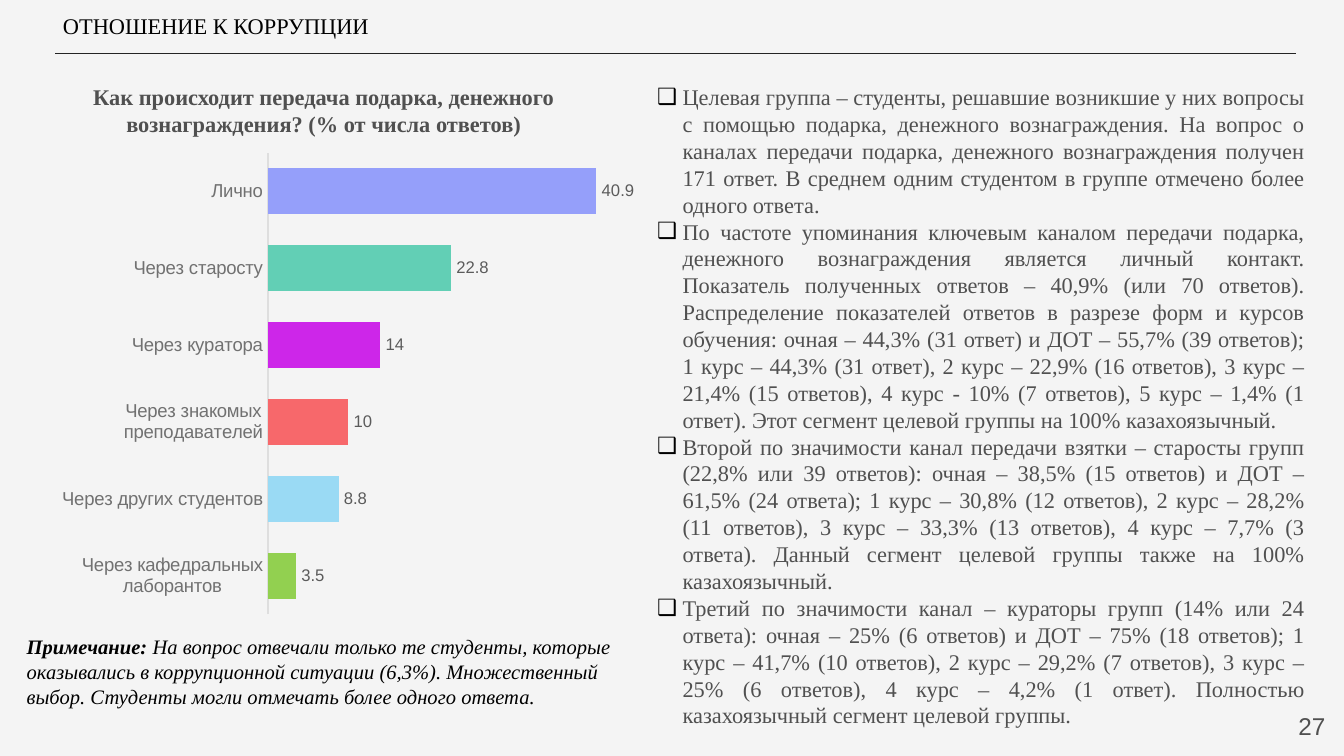
from dataclasses import dataclass

from lxml import etree
from pptx import Presentation
from pptx.chart.data import CategoryChartData
from pptx.dml.color import RGBColor
from pptx.enum.chart import XL_CHART_TYPE, XL_LABEL_POSITION, XL_TICK_LABEL_POSITION, XL_TICK_MARK
from pptx.enum.shapes import MSO_CONNECTOR
from pptx.enum.text import MSO_AUTO_SIZE, PP_ALIGN
from pptx.oxml.ns import qn
from pptx.util import Inches, Pt

BAR = XL_CHART_TYPE.BAR_CLUSTERED
OUTSIDE_END = XL_LABEL_POSITION.OUTSIDE_END
NEXT_TO_AXIS = XL_TICK_LABEL_POSITION.NEXT_TO_AXIS
NO_TICKS = XL_TICK_MARK.NONE
STRAIGHT = MSO_CONNECTOR.STRAIGHT
FIT_TEXT, FIXED = MSO_AUTO_SIZE.SHAPE_TO_FIT_TEXT, MSO_AUTO_SIZE.NONE
LEFT, CENTER, RIGHT, JUSTIFY = PP_ALIGN.LEFT, PP_ALIGN.CENTER, PP_ALIGN.RIGHT, PP_ALIGN.JUSTIFY


@dataclass(frozen=True)
class Theme:
    background: str = "F4F4F4"
    black: str = "000000"
    rule: str = "242424"
    body: str = "505050"
    category: str = "717171"
    value: str = "5B5B5B"
    axis: str = "DEDEDE"
    serif: str = "Times New Roman"
    sans: str = "Arial"
    text_size: float = 12
    note_size: float = 11
    number_size: float = 13
    category_size: float = 10
    value_size: float = 9


@dataclass(frozen=True)
class TextBlock:
    box: tuple[float, float, float, float]
    paragraphs: tuple[str, ...]
    color: str
    size: float
    font: str = Theme.serif
    align: PP_ALIGN = LEFT
    padding: tuple[float, float] = (0.1, 0.1)  # sides, top and bottom
    bold: bool = False
    italic: bool = False
    fit: bool = False
    bullet: str = ""
    lead: str = ""  # bold opening words


@dataclass(frozen=True)
class Channel:
    name: str
    percent: float
    color: str


THEME = Theme()

CHANNELS = [  # from the bottom bar up
    Channel("Через кафедральных лаборантов", 3.5, "92D050"),
    Channel("Через других студентов", 8.8, "9ADAF4"),
    Channel("Через знакомых преподавателей", 10, "F7686B"),
    Channel("Через куратора", 14, "CD26E9"),
    Channel("Через старосту", 22.8, "62CFB5"),
    Channel("Лично", 40.9, "959FFA"),
]

FINDINGS = (
    "Целевая группа – студенты, решавшие возникшие у них вопросы с помощью подарка, денежного "
    "вознаграждения. На вопрос о каналах передачи подарка, денежного вознаграждения получен "
    "171 ответ. В среднем одним студентом в группе отмечено более одного ответа.",
    "По частоте упоминания ключевым каналом передачи подарка, денежного вознаграждения является "
    "личный контакт. Показатель полученных ответов – 40,9% (или 70 ответов). Распределение "
    "показателей ответов в разрезе форм и курсов обучения: очная – 44,3% (31 ответ) и ДОТ – 55,7% "
    "(39 ответов); 1 курс – 44,3% (31 ответ), 2 курс – 22,9% (16 ответов), 3 курс – 21,4% "
    "(15 ответов), 4 курс - 10% (7 ответов), 5 курс – 1,4% (1 ответ). Этот сегмент целевой группы "
    "на 100% казахоязычный.",
    "Второй по значимости канал передачи взятки – старосты групп (22,8% или 39 ответов): очная – "
    "38,5% (15 ответов) и ДОТ – 61,5% (24 ответа); 1 курс – 30,8% (12 ответов), 2 курс – 28,2% "
    "(11 ответов), 3 курс – 33,3% (13 ответов), 4 курс – 7,7% (3 ответа). Данный сегмент целевой "
    "группы также на 100% казахоязычный.",
    "Третий по значимости канал – кураторы групп (14% или 24 ответа): очная – 25% (6 ответов) и "
    "ДОТ – 75% (18 ответов); 1 курс – 41,7% (10 ответов), 2 курс – 29,2% (7 ответов), 3 курс – 25% "
    "(6 ответов), 4 курс – 4,2% (1 ответ). Полностью казахоязычный сегмент целевой группы.",
)

TEXT_BLOCKS = [
    TextBlock((9.36, 5.19, 0.6, 0.43), ("27",), THEME.body, THEME.number_size, THEME.sans, RIGHT),
    TextBlock((4.79, 0.52, 5.02, 4.97), FINDINGS, THEME.body, THEME.text_size,
              align=JUSTIFY, bullet="❑"),
    TextBlock((0.31, 0.52, 4.2, 0.61),
              ("Как происходит передача подарка, денежного вознаграждения? (% от числа ответов)",),
              THEME.body, THEME.text_size, align=CENTER, bold=True, fit=True),
    TextBlock((0.37, 0.04, 9.25, 0.3), ("ОТНОШЕНИЕ К КОРРУПЦИИ",), THEME.black, THEME.text_size,
              padding=(0.1, 0.05), fit=True),
    TextBlock((0.1, 4.67, 4.69, 0.66),
              ("На вопрос отвечали только те студенты, которые оказывались в коррупционной ситуации "
               "(6,3%). Множественный выбор. Студенты могли отмечать более одного ответа.",),
              THEME.black, THEME.note_size, padding=(0.1, 0.05), italic=True, fit=True,
              lead="Примечание: "),
]


def rgb(color: str) -> RGBColor:
    return RGBColor.from_string(color)


def style_font(font, name: str, size: float, color: str) -> None:
    font.name, font.size = name, Pt(size)
    font.color.rgb = rgb(color)


def add_bullet(paragraph, symbol: str) -> None:
    properties = paragraph._p.get_or_add_pPr()
    properties.set("marL", str(Inches(0.19)))
    properties.set("indent", str(Inches(-0.19)))
    color = etree.SubElement(properties, qn("a:buClr"))
    etree.SubElement(color, qn("a:srgbClr"), val=THEME.black)
    etree.SubElement(properties, qn("a:buFont"), typeface=THEME.sans)
    etree.SubElement(properties, qn("a:buChar"), char=symbol)


def add_text(slide, block: TextBlock) -> None:
    frame = slide.shapes.add_textbox(*map(Inches, block.box)).text_frame
    frame.word_wrap = True
    frame.auto_size = FIT_TEXT if block.fit else FIXED
    frame.margin_left = frame.margin_right = Inches(block.padding[0])
    frame.margin_top = frame.margin_bottom = Inches(block.padding[1])
    for index, text in enumerate(block.paragraphs):
        paragraph = frame.add_paragraph() if index else frame.paragraphs[0]
        paragraph.alignment = block.align
        if block.bullet:
            add_bullet(paragraph, block.bullet)
        style_font(paragraph.font, block.font, block.size, block.color)
        paragraph.font.bold, paragraph.font.italic = block.bold, block.italic
        if block.lead:
            lead = paragraph.add_run()
            lead.text, lead.font.bold = block.lead, True
        paragraph.add_run().text = text


def add_header_rule(slide) -> None:
    rule = slide.shapes.add_connector(STRAIGHT, Inches(0.41), Inches(0.4), Inches(9.64), Inches(0.4))
    rule.line.color.rgb, rule.line.width = rgb(THEME.rule), Pt(0.75)
    etree.SubElement(rule._element.spPr, qn("a:effectLst"))


def set_plot_area(chart, x: float, y: float, width: float, height: float) -> None:
    plot_area = chart._chartSpace.chart.plotArea
    for old in plot_area.findall(qn("c:layout")):
        plot_area.remove(old)
    layout = etree.Element(qn("c:layout"))
    plot_area.insert(0, layout)
    manual = etree.SubElement(layout, qn("c:manualLayout"))
    settings = {"layoutTarget": "inner", "xMode": "edge", "yMode": "edge",
                "x": x, "y": y, "w": width, "h": height}
    for name, value in settings.items():
        etree.SubElement(manual, qn(f"c:{name}"), val=str(value))


def add_channel_chart(slide, channels: list[Channel]) -> None:
    data = CategoryChartData()
    data.categories = [channel.name for channel in channels]
    data.add_series("Series 1", [channel.percent for channel in channels])
    box = map(Inches, (0.31, 1.13, 4.41, 3.47))
    chart = slide.shapes.add_chart(BAR, *box, data).chart
    chart.has_legend = chart.has_title = False
    style_font(chart.font, THEME.sans, THEME.category_size, THEME.rule)
    set_plot_area(chart, 0.385, 0, 0.615, 0.992)

    # Axes
    names = chart.category_axis
    names.major_tick_mark = names.minor_tick_mark = NO_TICKS
    names.tick_label_position = NEXT_TO_AXIS
    names.format.line.color.rgb, names.format.line.width = rgb(THEME.axis), Pt(0.75)
    style_font(names.tick_labels.font, THEME.sans, THEME.category_size, THEME.category)
    percents = chart.value_axis
    percents.visible = percents.has_major_gridlines = False
    percents.minimum_scale, percents.maximum_scale = 0, 45

    # Bars and their values
    plot = chart.plots[0]
    plot.gap_width, plot.vary_by_categories = 66, False
    bars = plot.series[0]
    for index, channel in enumerate(channels):
        fill = bars.points[index].format.fill
        fill.solid()
        fill.fore_color.rgb = rgb(channel.color)
    labels = bars.data_labels
    labels.show_value, labels.position = True, OUTSIDE_END
    style_font(labels.font, THEME.sans, THEME.value_size, THEME.value)


def main() -> None:
    deck = Presentation()
    deck.slide_width, deck.slide_height = Inches(10), Inches(5.625)
    slide = deck.slides.add_slide(deck.slide_layouts[6])
    slide.background.fill.solid()
    slide.background.fill.fore_color.rgb = rgb(THEME.background)
    add_header_rule(slide)
    add_channel_chart(slide, CHANNELS)
    for block in TEXT_BLOCKS:
        add_text(slide, block)
    deck.save("out.pptx")


if __name__ == "__main__":
    main()
